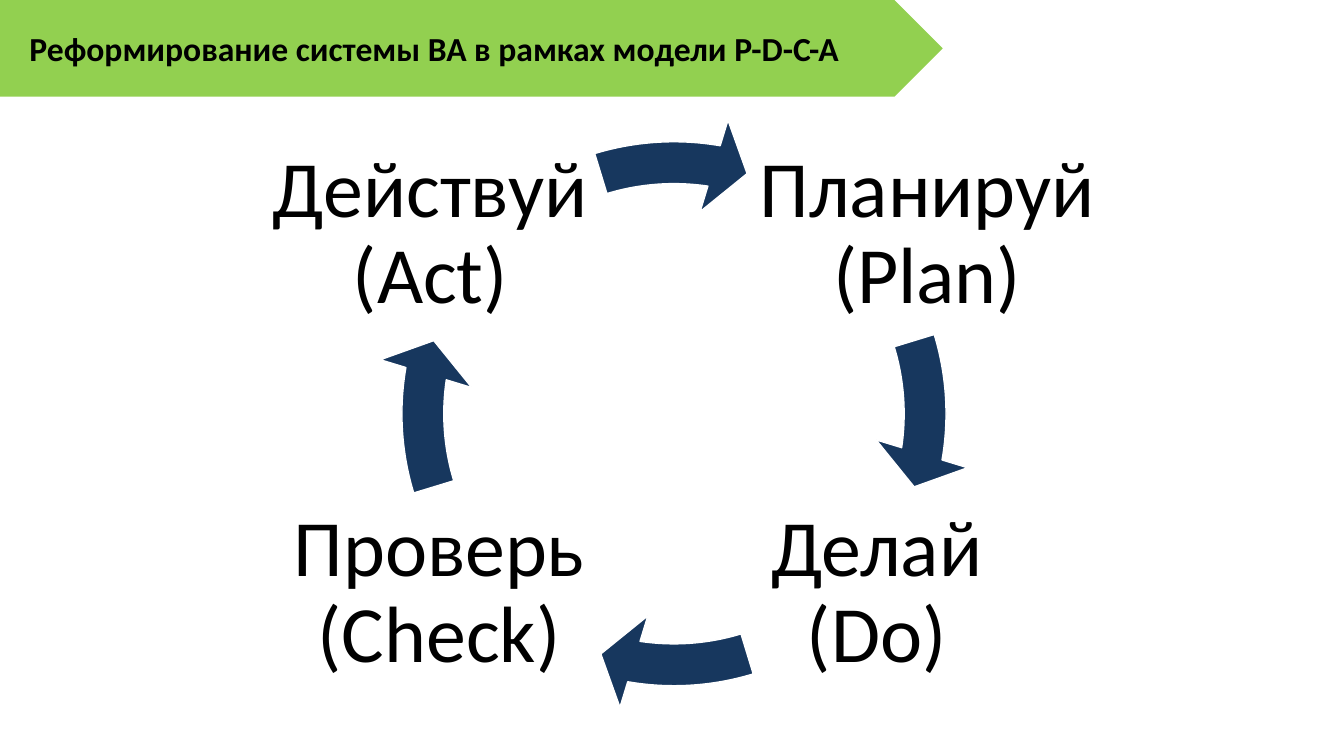
from typing import NamedTuple

from pptx import Presentation
from pptx.dml.color import RGBColor
from pptx.enum.shapes import MSO_SHAPE
from pptx.enum.text import MSO_ANCHOR, PP_ALIGN
from pptx.slide import Slide
from pptx.text.text import TextFrame
from pptx.util import Inches, Pt

GREEN = RGBColor(0x92, 0xD0, 0x50)
NAVY = RGBColor(0x17, 0x37, 0x5E)
BLACK = RGBColor(0, 0, 0)
WHITE = RGBColor(255, 255, 255)

FONT = "Calibri"
TITLE = "Реформирование системы ВА в рамках модели P-D-C-A"

# Arrow angles are in units of 100000/60000 degrees
TURN = 216
QUARTER = TURN / 4
HEAD = 5.51
TAIL = 205.84


class Step(NamedTuple):
    text: str
    left: float
    top: float
    width: float


# Clockwise from the lower right, each with the arrow that leads to it
STEPS = [
    Step("Делай (Do)", 7.42, 4.84, 2.55),
    Step("Проверь (Check)", 2.76, 4.84, 3.19),
    Step("Действуй (Act)", 2.58, 1.28, 3.38),
    Step("Планируй (Plan)", 7.42, 1.28, 3.55),
]


def write(frame: TextFrame, text: str, size: int, bold: bool, align: PP_ALIGN) -> None:
    frame.text = text
    frame.word_wrap = True
    frame.vertical_anchor = MSO_ANCHOR.MIDDLE
    para = frame.paragraphs[0]
    para.alignment = align
    font = para.runs[0].font
    font.name = FONT
    font.size = Pt(size)
    font.bold = bold
    font.color.rgb = BLACK


def add_title(slide: Slide) -> None:
    banner = slide.shapes.add_shape(
        MSO_SHAPE.PENTAGON, 0, 0, Inches(9.35), Inches(0.96))
    banner.shadow.inherit = False
    banner.fill.solid()
    banner.fill.fore_color.rgb = GREEN
    banner.line.fill.background()
    write(banner.text_frame, TITLE, 24, True, PP_ALIGN.LEFT)
    banner.text_frame.margin_left = Inches(0.29)


def add_arrow(slide: Slide, index: int) -> None:
    arrow = slide.shapes.add_shape(
        MSO_SHAPE.CIRCULAR_ARROW,
        Inches(3.72), Inches(1.14), Inches(5.93), Inches(5.93))
    shift = index * QUARTER
    values = (0.07, 4.65, HEAD + shift, (TAIL + shift) % TURN, 0.08)
    for slot, value in enumerate(values):
        arrow.adjustments[slot] = value
    arrow.shadow.inherit = False
    arrow.fill.solid()
    arrow.fill.fore_color.rgb = NAVY
    arrow.line.color.rgb = WHITE
    arrow.line.width = Pt(1)


def add_label(slide: Slide, step: Step) -> None:
    box = slide.shapes.add_textbox(
        Inches(step.left), Inches(step.top), Inches(step.width), Inches(2.1))
    frame = box.text_frame
    write(frame, step.text, 57, False, PP_ALIGN.CENTER)
    frame.paragraphs[0].line_spacing = 0.9
    frame.margin_left = frame.margin_right = Inches(0.08)
    frame.margin_top = frame.margin_bottom = Inches(0.08)


def main() -> None:
    deck = Presentation()
    deck.slide_width = Inches(13.33)
    deck.slide_height = Inches(7.5)
    slide = deck.slides.add_slide(deck.slide_layouts[6])

    # Title banner
    add_title(slide)

    # Cycle of steps
    for index, step in enumerate(STEPS):
        add_arrow(slide, index)
        add_label(slide, step)

    deck.save("out.pptx")


if __name__ == "__main__":
    main()
